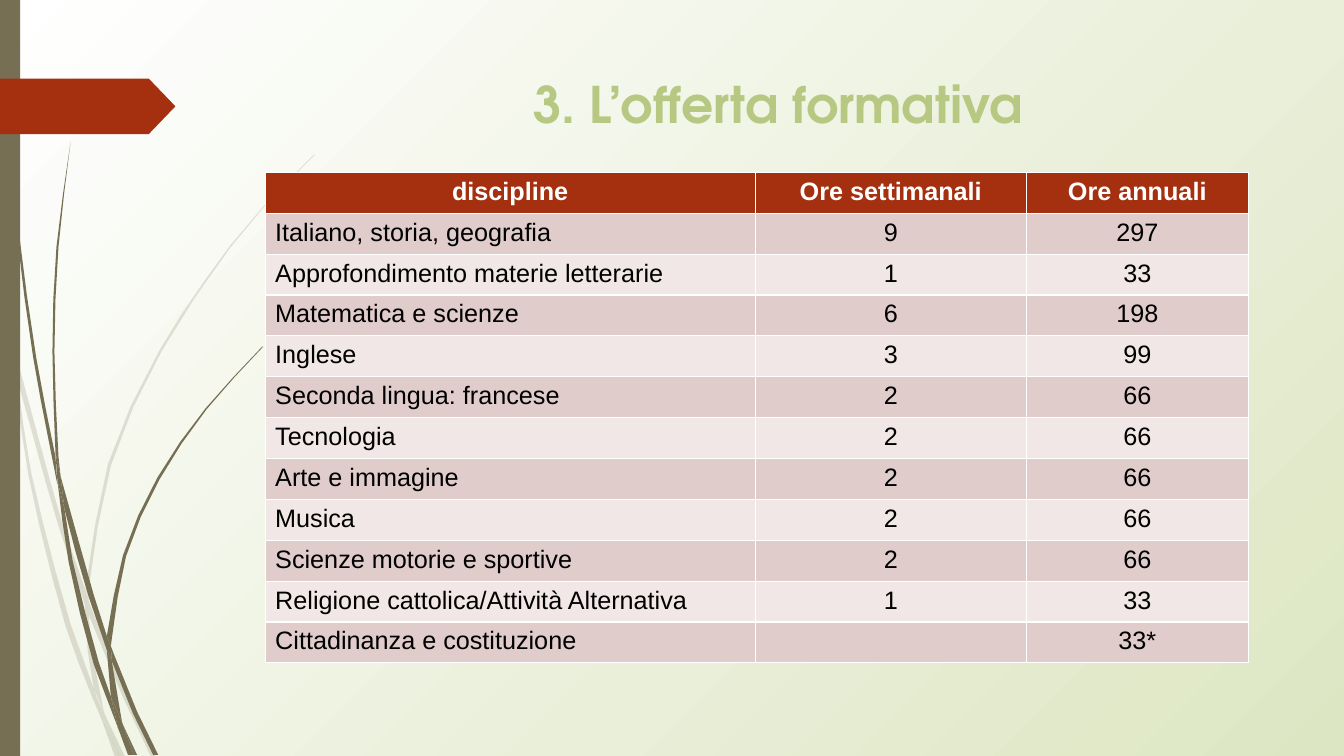
from collections import namedtuple
from dataclasses import dataclass
from math import dist

from lxml import etree
from pptx import Presentation
from pptx.dml.color import RGBColor
from pptx.enum.shapes import MSO_SHAPE
from pptx.enum.text import PP_ALIGN
from pptx.oxml import parse_xml
from pptx.oxml.ns import nsdecls, qn
from pptx.util import Inches, Pt

RECTANGLE, PENNANT = MSO_SHAPE.RECTANGLE, MSO_SHAPE.PENTAGON
CENTER, LEFT = PP_ALIGN.CENTER, PP_ALIGN.LEFT

Box = namedtuple("Box", "left top width height")


@dataclass(frozen=True)
class Theme:
    """Colours, fonts and sizes of the slide."""
    white: str = "FFFFFF"
    black: str = "000000"
    meadow: str = "DDE6C3"
    stem: str = "766F54"
    accent: str = "A53010"
    title: str = "B6C882"
    bands: tuple = ("E0CCCA", "F0E7E6")
    title_font: str = "TeX Gyre Adventor"
    body_font: str = "Arial"
    title_size: int = 36
    body_size: int = 18


THEME = Theme()
SLIDE = Box(0, 0, 13.33, 7.5)
STEPS_PER_INCH = 2
UNITS = 1000

HOURS = [
    ("discipline", "Ore settimanali", "Ore annuali"),
    ("Italiano, storia, geografia", "9", "297"),
    ("Approfondimento materie letterarie", "1", "33"),
    ("Matematica e scienze", "6", "198"),
    ("Inglese", "3", "99"),
    ("Seconda lingua: francese", "2", "66"),
    ("Tecnologia", "2", "66"),
    ("Arte e immagine", "2", "66"),
    ("Musica", "2", "66"),
    ("Scienze motorie e sportive", "2", "66"),
    ("Religione cattolica/Attività Alternativa", "1", "33"),
    ("Cittadinanza e costituzione", "", "33*"),
]
COLUMNS = (4.86, 2.69, 2.2)

PALE_BLADES = [
    ([(0, 2.82), (.09, 3.22), (.11, 3.5)], [(.1, 3.44), (0, 2.99)]),
    ([(.14, 3.45), (.62, 5.2), (.85, 5.86)], [(.84, 5.99), (.58, 5.22), (.17, 3.76)]),
    ([(.88, 5.96), (.92, 6.07), (1.27, 6.92), (1.55, 7.51)],
     [(1.5, 7.51), (1.23, 6.94), (.88, 6.1)]),
    ([(1.05, 7.11), (1.24, 7.51)], [(1.19, 7.51)]),
    ([(.11, 3.5), (.17, 3.76), (.31, 4.69), (.7, 6.19), (.93, 6.83), (1.01, 7.14)],
     [(.92, 6.93), (.65, 6.21), (.28, 4.7), (.11, 3.5)]),
    ([(.84, 5.99), (.87, 6.46), (.93, 6.83), (1.05, 7.11)],
     [(1.03, 7.06), (.91, 6.46), (.88, 6.1)]),
    ([(.88, 5.96), (.88, 5.84), (1.1, 4.62), (1.6, 3.49), (2.29, 2.45), (2.68, 1.98),
      (3.12, 1.54)],
     [(3.12, 1.53), (2.68, 1.97), (2.28, 2.44), (1.58, 3.48), (1.07, 4.61), (.85, 5.84)]),
    ([(1.01, 7.14), (1.14, 7.51)], [(1.19, 7.51)]),
    ([(.88, 6.1), (.88, 5.96)], [(.85, 5.86), (.84, 5.99)]),
    ([(.93, 6.83), (1.01, 7.14), (1.19, 7.51)], [(1.05, 7.11), (.96, 6.92)]),
]
DARK_BLADES = [
    ([(.03, 0), (.07, 1.1), (.17, 2.33), (.33, 3.55), (.57, 4.81)],
     [(.55, 4.53), (.36, 3.55), (.19, 2.32), (.08, 1.09), (.04, 0)]),
    ([(.6, 4.72), (.64, 5.05), (.88, 5.92), (1.06, 6.45)],
     [(1.06, 6.31), (.93, 5.9), (.6, 4.72)]),
    ([(1.1, 6.41), (1.11, 6.56), (1.32, 7.08), (1.52, 7.49)],
     [(1.57, 7.49), (1.36, 7.06), (1.13, 6.49)]),
    ([(.57, 4.77), (.68, 5.57), (.93, 6.59), (1.17, 7.22)],
     [(1.1, 6.91), (.98, 6.57), (.72, 5.56), (.64, 5.05)]),
    ([(.6, 4.72), (.58, 4.53), (.54, 3.49), (.58, 2.45), (.7, 1.41)],
     [(.7, 1.41), (.56, 2.45), (.52, 3.49), (.55, 4.49)]),
    ([(1.22, 7.19), (1.33, 7.49)], [(1.36, 7.49)]),
    ([(.55, 4.49), (.57, 4.77), (.64, 5.05)], [(.6, 4.72)]),
    ([(1.1, 6.41), (1.11, 6.33), (1.25, 5.52), (1.58, 4.76), (2.05, 4.06), (2.61, 3.44)],
     [(2.6, 3.44), (2.04, 4.05), (1.56, 4.74), (1.22, 5.51), (1.06, 6.31)]),
    ([(1.17, 7.22), (1.27, 7.49)], [(1.31, 7.49)]),
    ([(1.06, 6.45), (1.1, 6.91), (1.22, 7.19)], [(1.21, 7.16), (1.11, 6.56)]),
    ([(1.06, 6.31), (1.06, 6.45), (1.11, 6.56)], [(1.1, 6.41)]),
    ([(1.1, 6.91), (1.17, 7.22), (1.3, 7.49)], [(1.33, 7.49), (1.22, 7.19)]),
]


def rgb(code):
    """Turn a hex code into a colour."""
    return RGBColor.from_string(code)


def emu(box):
    """Turn a box in inches into slide lengths."""
    return [Inches(length) for length in box]


def paint(shape, color):
    """Give a shape a plain fill without line or shadow."""
    shape.fill.solid()
    shape.fill.fore_color.rgb = rgb(color)
    shape.line.fill.background()
    shape.shadow.inherit = False


def write(paragraph, text, font, size, color, bold, align):
    """Set and format the text of one paragraph."""
    paragraph.text = text
    paragraph.alignment = align
    for run in paragraph.runs:
        run.font.name, run.font.size, run.font.bold = font, Pt(size), bold
        run.font.color.rgb = rgb(color)


def smooth_edge(anchors):
    """Return points on a smooth curve through the anchors."""
    padded = [anchors[0], *anchors, anchors[-1]]
    points = [anchors[0]]
    for before, start, end, after in zip(padded, padded[1:], padded[2:], padded[3:]):
        chord = dist(start, end)
        leave = chord / (dist(before, start) + chord)
        arrive = chord / (chord + dist(end, after))
        steps = max(1, round(chord * STEPS_PER_INCH))
        for step in range(1, steps + 1):
            t = step / steps
            points.append(tuple(
                (2 * t**3 - 3 * t**2 + 1) * s + (3 * t**2 - 2 * t**3) * e
                + (t**3 - 2 * t**2 + t) * leave * (e - b) + (t**3 - t**2) * arrive * (a - s)
                for b, s, e, a in zip(before, start, end, after)))
    return points


def draw_blades(slide, box, blades, opacity):
    """Draw a tuft of grass blades, measured from the corner of the box."""
    for rising, returning in blades:
        outline = [((box.left + x) * UNITS, (box.top + y) * UNITS)
                   for x, y in smooth_edge(rising) + smooth_edge(returning)]
        builder = slide.shapes.build_freeform(*outline[0], scale=Inches(1) / UNITS)
        builder.add_line_segments(outline[1:], close=True)
        blade = builder.convert_to_shape()
        paint(blade, THEME.stem)
        if opacity < 100:
            tint = next(blade.element.iter(qn("a:srgbClr")))
            etree.SubElement(tint, qn("a:alpha")).set("val", str(opacity * 1000))


def draw_background(slide):
    """Fill the slide with a glow from the top left corner."""
    fill = slide.background.fill
    fill.gradient()
    for stop, color in zip(fill.gradient_stops, (THEME.white, THEME.meadow)):
        stop.color.rgb = rgb(color)
    linear = next(slide.element.iter(qn("a:lin")))
    linear.getparent().replace(linear, parse_xml(
        f'<a:path {nsdecls("a")} path="circle"><a:fillToRect r="100000" b="100000"/></a:path>'))


def draw_margin(slide, box):
    """Draw the grass, the side bar and the pennant."""
    draw_blades(slide, box, PALE_BLADES, 20)
    draw_blades(slide, box, DARK_BLADES, 100)
    bar = slide.shapes.add_shape(RECTANGLE, *emu(box._replace(width=0.2)))
    paint(bar, THEME.stem)
    pennant = slide.shapes.add_shape(PENNANT, *emu((box.left, box.top + 0.78, 1.74, 0.55)))
    pennant.adjustments[0] = 0.48
    paint(pennant, THEME.accent)


def draw_title(slide, box):
    """Write the heading."""
    frame = slide.shapes.add_textbox(*emu(box)).text_frame
    frame.word_wrap = True
    write(frame.paragraphs[0], "3. L’offerta formativa", THEME.title_font,
          THEME.title_size, THEME.title, True, CENTER)


def draw_hours(slide, box):
    """Lay out the table of teaching hours."""
    table = slide.shapes.add_table(len(HOURS), len(COLUMNS), *emu(box)).table
    for column, width in zip(table.columns, COLUMNS):
        column.width = Inches(box.width * width / sum(COLUMNS))
    for r, entries in enumerate(HOURS):
        table.rows[r].height = Inches(box.height / len(HOURS))
        header = r == 0
        for c, entry in enumerate(entries):
            cell = table.cell(r, c)
            cell.fill.solid()
            cell.fill.fore_color.rgb = rgb(THEME.accent if header else THEME.bands[(r - 1) % 2])
            write(cell.text_frame.paragraphs[0], entry, THEME.body_font, THEME.body_size,
                  THEME.white if header else THEME.black, header,
                  CENTER if header or c else LEFT)


def main():
    """Build and save the slide."""
    deck = Presentation()
    deck.slide_width, deck.slide_height = Inches(SLIDE.width), Inches(SLIDE.height)
    slide = deck.slides.add_slide(deck.slide_layouts[6])
    draw_background(slide)
    draw_margin(slide, SLIDE)
    draw_title(slide, Box(2.84, 0.68, 9.75, 1.4))
    draw_hours(slide, Box(2.63, 1.71, 9.75, 4.87))
    deck.save("out.pptx")


if __name__ == "__main__":
    main()
